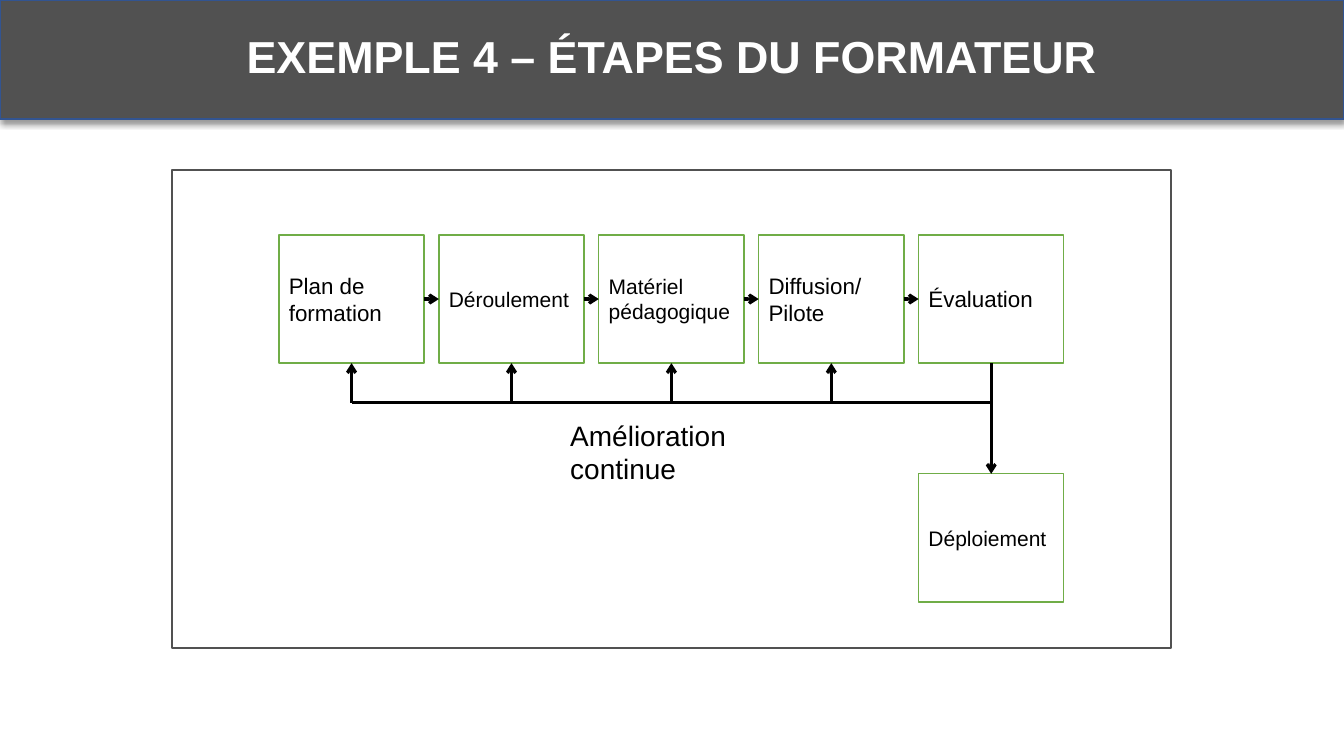
"""Build the slide showing the steps a trainer follows."""
import pptx
import pptx.dml.color
import pptx.enum.shapes
import pptx.enum.text
import pptx.oxml
import pptx.oxml.ns
import pptx.util
from lxml import etree

Cm, Pt, qn = pptx.util.Cm, pptx.util.Pt, pptx.oxml.ns.qn
RECTANGLE = pptx.enum.shapes.MSO_SHAPE.RECTANGLE
STRAIGHT = pptx.enum.shapes.MSO_CONNECTOR.STRAIGHT
ANCHOR, ALIGN = pptx.enum.text.MSO_ANCHOR, pptx.enum.text.PP_ALIGN
color = pptx.dml.color.RGBColor.from_string

deck = pptx.Presentation()
deck.slide_width, deck.slide_height = Cm(33.87), Cm(19.05)
slide = deck.slides.add_slide(deck.slide_layouts[5])


def add_box(left, top, width, height, fill=None, line=None, weight=1, text="", size=16):
    box = slide.shapes.add_shape(RECTANGLE, Cm(left), Cm(top), Cm(width), Cm(height))
    box.shadow.inherit = False
    if fill:
        box.fill.solid()
        box.fill.fore_color.rgb = color(fill)
    else:
        box.fill.background()
    if line:
        box.line.color.rgb = color(line)
        box.line.width = Pt(weight)
    else:
        box.line.fill.background()
    box.text_frame.text = text
    box.text_frame.vertical_anchor = ANCHOR.MIDDLE
    for paragraph in box.text_frame.paragraphs:
        paragraph.alignment = ALIGN.LEFT
        paragraph.font.name = "Arial"
        paragraph.font.size = Pt(size)
        paragraph.font.color.rgb = color("000000")
    return box


def add_link(x1, y1, x2, y2, start=None, end=None, arrow=True):
    link = slide.shapes.add_connector(STRAIGHT, Cm(x1), Cm(y1), Cm(x2), Cm(y2))
    if start:
        link.begin_connect(*start)
    if end:
        link.end_connect(*end)
    link.line.color.rgb = color("000000")
    link.line.width = Pt(2.25)
    properties = link.element.spPr
    if arrow:
        etree.SubElement(properties.find(qn("a:ln")), qn("a:tailEnd"), type="arrow")
    etree.SubElement(properties, qn("a:effectLst"))


banner = add_box(0, 0, 33.87, 3, fill="515151", line="325491")
banner.element.spPr.find(qn("a:effectLst")).append(pptx.oxml.parse_xml(
    f'<a:outerShdw {pptx.oxml.ns.nsdecls("a")} blurRad="{Pt(4)}" dist="{Pt(3)}" '
    'dir="5400000" rotWithShape="0"><a:srgbClr val="000000">'
    '<a:alpha val="40000"/></a:srgbClr></a:outerShdw>'))

title = slide.shapes.title
title.element.addprevious(banner.element)
title.left, title.top, title.width, title.height = Cm(0), Cm(0.74), Cm(33.87), Cm(2.29)
title.text_frame.text = "EXEMPLE 4 – ÉTAPES DU FORMATEUR"
title.text_frame.vertical_anchor = ANCHOR.TOP
heading = title.text_frame.paragraphs[0]
heading.alignment = ALIGN.CENTER
heading.line_spacing = 0.9
heading.font.name = "Arial"
heading.font.size = Pt(32)
heading.font.bold = True
heading.font.color.rgb = color("FFFFFF")

step_left, step_top, step_pitch = 7.03, 5.92, 4.03
step_width, step_height = 3.66, 3.23
step_bottom = step_top + step_height
return_y = 10.15
step_texts = [
    ("Plan de formation", 16),
    ("Déroulement", 15),
    ("Matériel pédagogique", 15),
    ("Diffusion/\nPilote", 16),
    ("Évaluation", 16),
]
steps = [
    add_box(step_left + i * step_pitch, step_top, step_width, step_height,
            fill="FFFFFF", line="70AD47", text=text, size=size)
    for i, (text, size) in enumerate(step_texts)
]
centers = [step_left + i * step_pitch + step_width / 2 for i in range(len(steps))]
evaluation = steps[-1]
deployment_top = 11.94
deployment = add_box(step_left + 4 * step_pitch, deployment_top, step_width, step_height,
                     fill="FFFFFF", line="70AD47", text="Déploiement", size=15)

improvement = add_box(14.12, 10.41, 6.88, 1.96, fill="FFFFFF",
                      text="Amélioration continue", size=20)
improvement.text_frame.vertical_anchor = ANCHOR.TOP

middle_y = step_top + step_height / 2
for i, (step, following) in enumerate(zip(steps, steps[1:])):
    right = step_left + i * step_pitch + step_width
    next_left = step_left + (i + 1) * step_pitch
    add_link(right, middle_y, next_left, middle_y, start=(step, 3), end=(following, 1))
    add_link(centers[i], return_y, centers[i], step_bottom, end=(step, 2))
add_link(centers[-1], step_bottom, centers[-1], deployment_top,
         start=(evaluation, 2), end=(deployment, 0))
add_link(centers[0], return_y, centers[-1], return_y, arrow=False)

add_box(4.34, 4.29, 25.17, 12.04, line="515151", weight=1.5)

deck.save("out.pptx")
